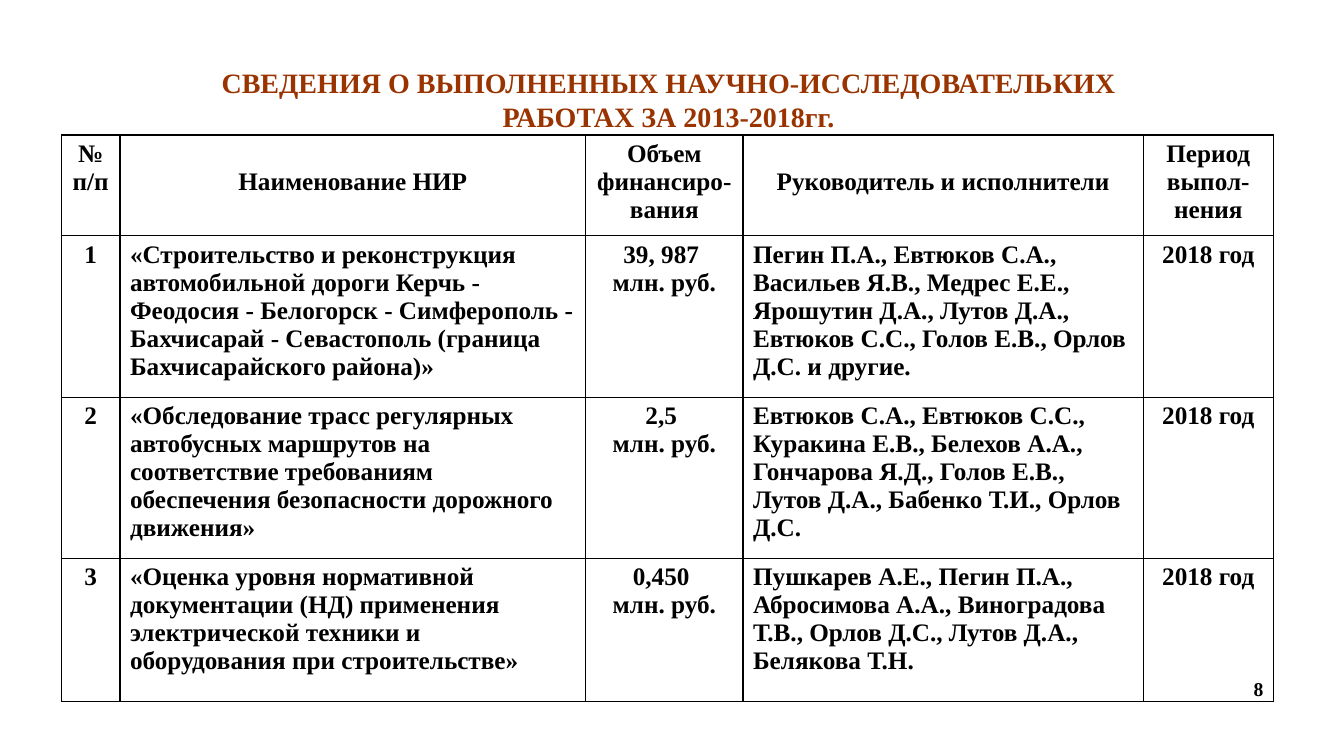
"""Slide with a table of completed research projects for 2013-2018."""
import pptx
import pptx.util
import pptx.dml.color
import pptx.enum.text
import lxml.etree

Inches, Pt = pptx.util.Inches, pptx.util.Pt
RGB = pptx.dml.color.RGBColor.from_string
ALIGN = pptx.enum.text.PP_ALIGN
ANCHOR = pptx.enum.text.MSO_ANCHOR
THEME = {"font": "Times New Roman", "title": "993300", "text": "000000", "cell": "FFFFFF",
         "title_size": 20, "table_size": 18, "number_size": 14}
COLS = [0.58, 4.62, 1.56, 3.97, 1.29]
ROWS = [1, 1.6, 1.6, 1.42]
HEADERS = ["№ п/п", "Наименование НИР", "Объем финансиро-\nвания",
           "Руководитель и исполнители", "Период выпол-нения"]
PROJECTS = [
    ["1", "«Строительство и реконструкция автомобильной дороги Керчь - Феодосия - Белогорск - "
     "Симферополь - Бахчисарай - Севастополь (граница Бахчисарайского района)»",
     "39, 987 \nмлн. руб.",
     "Пегин П.А., Евтюков С.А., Васильев Я.В., Медрес Е.Е., Ярошутин Д.А., Лутов Д.А., "
     "Евтюков С.С., Голов Е.В., Орлов Д.С. и другие.", "2018 год"],
    ["2", "«Обследование трасс регулярных автобусных маршрутов на соответствие требованиям "
     "обеспечения безопасности дорожного движения»",
     "2,5 \nмлн. руб.",
     "Евтюков С.А., Евтюков С.С., Куракина Е.В., Белехов А.А., Гончарова Я.Д., Голов Е.В., "
     "Лутов Д.А., Бабенко Т.И., Орлов Д.С.", "2018 год"],
    ["3", "«Оценка уровня нормативной документации (НД) применения электрической техники и "
     "оборудования при строительстве»",
     "0,450 \nмлн. руб.",
     "Пушкарев А.Е., Пегин П.А., Абросимова А.А., Виноградова Т.В., Орлов Д.С., Лутов Д.А., "
     "Белякова Т.Н.", "2018 год"],
]


def write(tf, text, size, color, align):
    """Fill a text frame with bold paragraphs in the theme font."""
    tf.word_wrap = True
    tf.text = text
    for p in tf.paragraphs:
        p.alignment = align
        p.font.name, p.font.size, p.font.bold = THEME["font"], Pt(THEME[size]), True
        p.font.color.rgb = RGB(THEME[color])


def add_borders(cell):
    """Draw a thin line on all four sides of a cell."""
    tcPr = cell._tc.get_or_add_tcPr()
    for i, side in enumerate(("lnL", "lnR", "lnT", "lnB")):
        ln = pptx.oxml.parse_xml(
            f'<a:{side} xmlns:a="http://schemas.openxmlformats.org/drawingml/2006/main" w="12700">'
            f'<a:solidFill><a:srgbClr val="{THEME["text"]}"/></a:solidFill></a:{side}>')
        tcPr.insert(i, ln)


prs = pptx.Presentation()
prs.slide_width, prs.slide_height = Inches(13.33), Inches(7.5)
s = prs.slides.add_slide(prs.slide_layouts[6])

table = s.shapes.add_table(len(ROWS), len(COLS), Inches(0.61), Inches(1.34),
                           Inches(sum(COLS)), Inches(sum(ROWS))).table
for column, width in zip(table.columns, COLS):
    column.width = Inches(width)
for row, height in zip(table.rows, ROWS):
    row.height = Inches(height)
for r, texts in enumerate([HEADERS] + PROJECTS):
    for c, text in enumerate(texts):
        cell = table.cell(r, c)
        cell.fill.solid()
        cell.fill.fore_color.rgb = RGB(THEME["cell"])
        add_borders(cell)
        is_long = c in (1, 3)
        align = ALIGN.LEFT if r and is_long else ALIGN.CENTER
        write(cell.text_frame, text, "table_size", "text", align)
        if r == 0 and is_long:
            cell.margin_top = Inches(0.33)

title = s.shapes.add_textbox(Inches(1.37), Inches(0.6), Inches(10.59), Inches(0.77))
write(title.text_frame, "СВЕДЕНИЯ О ВЫПОЛНЕННЫХ НАУЧНО-ИССЛЕДОВАТЕЛЬКИХ \nРАБОТАХ ЗА 2013-2018гг. ",
      "title_size", "title", ALIGN.CENTER)

number = s.shapes.add_textbox(Inches(9.63), Inches(6.63), Inches(3), Inches(0.4))
number.text_frame.vertical_anchor = ANCHOR.MIDDLE
write(number.text_frame, "8", "number_size", "text", ALIGN.RIGHT)

prs.save("out.pptx")
